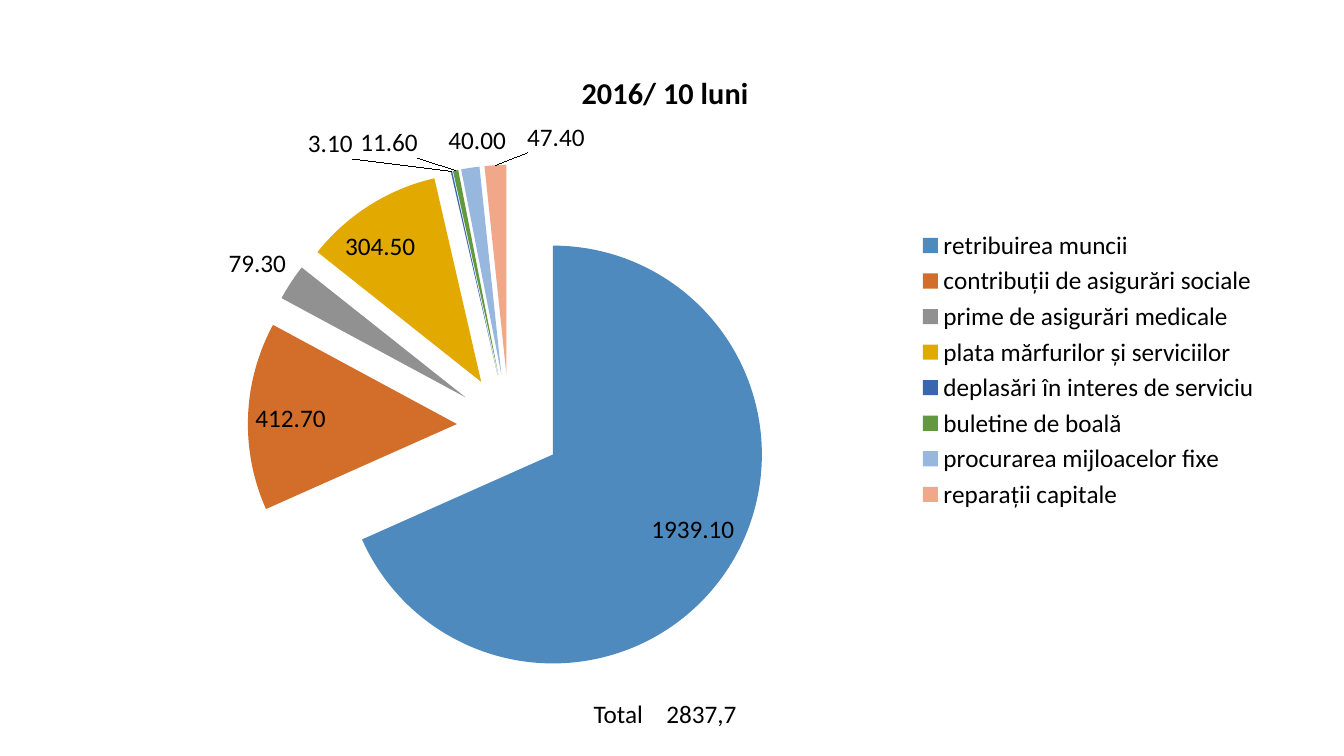
import pptx
import pptx.chart.data
import pptx.dml.color
import pptx.enum.chart
import pptx.enum.text
import pptx.oxml
import pptx.oxml.ns
import pptx.util
from dataclasses import dataclass

PX = 9144


@dataclass(frozen=True)
class Theme:
    font: str = "Calibri"
    text: str = "000000"
    body_size: float = 18
    title_size: float = 21.6
    slices: tuple = ("4F8ABE", "D26E2A", "919191", "E2AA00",
                     "3A66B0", "62993E", "98B7DF", "F1A78A")


THEME = Theme()
TITLE = "2016/ 10 luni"
EXPENSES = {
    "retribuirea muncii": 1939.1,
    "contribuții de asigurări sociale": 412.7,
    "prime de asigurări medicale": 79.3,
    "plata mărfurilor și serviciilor": 304.5,
    "deplasări în interes de serviciu": 3.1,
    "buletine de boală": 11.6,
    "procurarea mijloacelor fixe": 40,
    "reparații capitale": 47.4,
}
LABEL_SHIFTS = {4: (-0.08, -0.01), 5: (-0.03, -0.01), 6: (0.03, -0.01), 7: (0.05, -0.01)}
EXPLOSION = 25


def emu(box):
    return [pptx.util.Emu(length * PX) for length in box]


def set_font(font, size, bold=False):
    font.name = THEME.font
    font.size = pptx.util.Pt(size)
    font.bold = bold
    font.color.rgb = pptx.dml.color.RGBColor.from_string(THEME.text)


def manual_layout(modes, **fractions):
    values = {**modes, **fractions}
    items = "".join(f'<c:{name} val="{value}"/>' for name, value in values.items())
    return pptx.oxml.parse_xml(
        f'<c:layout {pptx.oxml.ns.nsdecls("c")}><c:manualLayout>{items}'
        "</c:manualLayout></c:layout>")


def replace_layout(element, layout, index):
    for old in element.findall(pptx.oxml.ns.qn("c:layout")):
        element.remove(old)
    element.insert(index, layout)


def add_chart_title(chart):
    chart.has_title = True
    frame = chart.chart_title.text_frame
    frame.text = TITLE
    set_font(frame.paragraphs[0].runs[0].font, THEME.title_size, True)
    layout = manual_layout({"xMode": "edge", "yMode": "edge"}, x=0.43, y=0.04)
    replace_layout(chart.chart_title._element, layout, 1)


def format_slices(series):
    explosion = pptx.oxml.parse_xml(
        f'<c:explosion {pptx.oxml.ns.nsdecls("c")} val="{EXPLOSION}"/>')
    series._element.find(pptx.oxml.ns.qn("c:tx")).addnext(explosion)
    for index, color in enumerate(THEME.slices):
        fill = series.points[index].format.fill
        fill.solid()
        fill.fore_color.rgb = pptx.dml.color.RGBColor.from_string(color)


def format_labels(series):
    position = pptx.enum.chart.XL_LABEL_POSITION
    labels = series.data_labels
    labels.show_value = True
    labels.number_format = "0.00"
    labels.number_format_is_linked = False
    labels.position = position.BEST_FIT
    set_font(labels.font, THEME.body_size)
    for index, (across, down) in LABEL_SHIFTS.items():
        label = series.points[index].data_label
        label.position = position.OUTSIDE_END
        set_font(label.font, THEME.body_size)
        element = labels._element.xpath(f'c:dLbl[c:idx/@val="{index}"]')[0]
        replace_layout(element, manual_layout({}, x=across, y=down), 1)


def add_expense_chart(slide, box):
    data = pptx.chart.data.CategoryChartData(number_format="0.00")
    data.categories = list(EXPENSES)
    data.add_series(TITLE, list(EXPENSES.values()))
    chart = slide.shapes.add_chart(
        pptx.enum.chart.XL_CHART_TYPE.PIE, *emu(box), data).chart
    set_font(chart.font, THEME.body_size)
    add_chart_title(chart)
    chart.has_legend = True
    chart.legend.position = pptx.enum.chart.XL_LEGEND_POSITION.RIGHT
    chart.legend.include_in_layout = False
    set_font(chart.legend.font, THEME.body_size)
    plot = chart.plots[0]
    plot.vary_by_categories = True
    format_slices(plot.series[0])
    format_labels(plot.series[0])
    modes = {"layoutTarget": "inner", "xMode": "edge", "yMode": "edge"}
    layout = manual_layout(modes, x=0.16, y=0.19, w=0.43, h=0.79)
    plot_area = chart._chartSpace.chart.plotArea
    replace_layout(plot_area, layout, 0)


def add_total(slide, box):
    frame = slide.shapes.add_textbox(*emu(box)).text_frame
    frame.word_wrap = True
    frame.auto_size = pptx.enum.text.MSO_AUTO_SIZE.SHAPE_TO_FIT_TEXT
    paragraph = frame.paragraphs[0]
    paragraph.text = "Total\t2837,7"
    set_font(paragraph.runs[0].font, THEME.body_size)
    tabs = pptx.oxml.parse_xml(
        f'<a:tabLst {pptx.oxml.ns.nsdecls("a")}><a:tab pos="{72 * PX}" algn="l"/></a:tabLst>')
    paragraph._p.get_or_add_pPr().append(tabs)


def main():
    presentation = pptx.Presentation()
    presentation.slide_width, presentation.slide_height = emu((1333, 750))
    slide = presentation.slides.add_slide(presentation.slide_layouts[6])
    add_expense_chart(slide, (52, 39, 1208, 656))
    add_total(slide, (579, 688, 554, 40))
    presentation.save("out.pptx")


if __name__ == "__main__":
    main()
